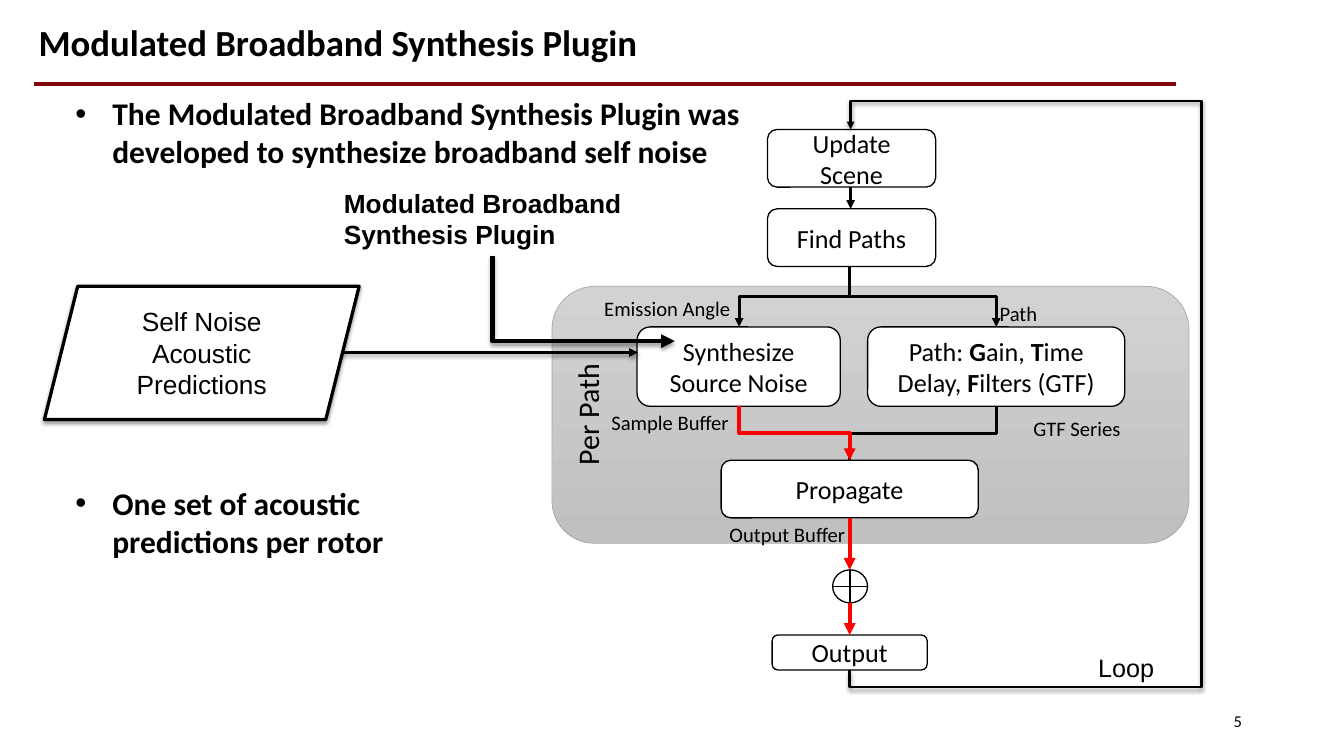
"""Build the slide on the broadband synthesis plugin and its processing loop."""
from lxml import etree
from pptx import Presentation
from pptx.dml.color import RGBColor
from pptx.enum import shapes, text
from pptx.oxml import ns
from pptx.util import Inches, Pt

BLACK = RGBColor(0, 0, 0)
WHITE = RGBColor(255, 255, 255)
RED = RGBColor(255, 0, 0)
MAROON = RGBColor(0x80, 0x08, 0x0C)
PANEL_TOP = RGBColor(0xD2, 0xD2, 0xD2)
PANEL_BOTTOM = RGBColor(0xC0, 0xC0, 0xC0)
PANEL_EDGE = RGBColor(0xA5, 0xA5, 0xA5)

KIND = shapes.MSO_SHAPE
CENTER, LEFT, RIGHT = text.PP_ALIGN.CENTER, text.PP_ALIGN.LEFT, text.PP_ALIGN.RIGHT
TOP, MIDDLE = text.MSO_ANCHOR.TOP, text.MSO_ANCHOR.MIDDLE

TITLE = "Modulated Broadband Synthesis Plugin"
AXIS = 8.99
GTF = [("Path: ", False), ("G", True), ("ain, ", False), ("T", True),
       ("ime Delay, ", False), ("F", True), ("ilters (GTF)", False)]
STEPS = [
    ((8.12, 1.37, 1.78, 0.61), "Update Scene"),
    ((8.12, 2.21, 1.78, 0.61), "Find Paths"),
    ((9.18, 3.46, 2.72, 0.84), GTF),
    ((6.74, 3.46, 2.15, 0.84), "Synthesize Source Noise"),
    ((7.63, 4.87, 2.72, 0.61), "Propagate"),
    ((8.17, 6.72, 1.64, 0.37), "Output"),
]
LABELS = [
    ((6.29, 3.08, 1.54, 0.36), "Emission Angle"),
    ((10.47, 3.14, 0.61, 0.36), "Path"),
    ((6.36, 4.29, 1.46, 0.36), "Sample Buffer"),
    ((10.83, 4.35, 1.13, 0.36), "GTF Series"),
    ((7.61, 5.47, 1.44, 0.36), "Output Buffer"),
]
BULLETS = [
    ((0.7, 0.95, 7.6, 1.04), "The Modulated Broadband Synthesis Plugin was "
                             "developed to synthesize broadband self noise"),
    ((0.7, 5.07, 4.01, 2.5), "One set of acoustic predictions per rotor"),
]
FORKS = [((AXIS, 2.82), (7.82, 3.46)), ((AXIS, 2.82), (10.54, 3.46))]
RED_DROPS = [((AXIS, 5.48), (AXIS, 6.03)), ((AXIS, 6.38), (AXIS, 6.72))]
LOOP = [(AXIS, 7.09), (AXIS, 7.27), (12.71, 7.27), (12.71, 1.07), (9, 1.07), (9, 1.37)]


def add_child(parent, tag, **attributes):
    return etree.SubElement(parent, ns.qn(tag), attributes)


def set_effect(shape, shadow=False):
    properties = shape._element.spPr
    for old in properties.findall(ns.qn("a:effectLst")):
        properties.remove(old)
    effects = add_child(properties, "a:effectLst")
    if shadow:
        outer = add_child(effects, "a:outerShdw", blurRad=str(Pt(3.1)), dist=str(Pt(1.6)),
                          dir="5400000", rotWithShape="0")
        color = add_child(outer, "a:srgbClr", val=str(BLACK))
        add_child(color, "a:alpha", val="38000")


def set_line(shape, color, width, arrow=False, shadow=False):
    shape.line.color.rgb = color
    shape.line.width = Pt(width)
    if arrow:
        add_child(shape.line._get_or_add_ln(), "a:tailEnd", type="triangle")
    set_effect(shape, shadow)


def write(shape, content, size, font="Calibri", bold=False, align=LEFT,
          anchor=TOP, wrap=True, bullet=False):
    frame = shape.text_frame
    frame.word_wrap = wrap
    frame.vertical_anchor = anchor
    para = frame.paragraphs[0]
    para.alignment = align
    if bullet:
        settings = para._p.get_or_add_pPr()
        settings.set("marL", str(Inches(0.39)))
        settings.set("indent", str(Inches(-0.39)))
        add_child(settings, "a:buFont", typeface="Arial")
        add_child(settings, "a:buChar", char="•")
    spans = [(content, bold)] if isinstance(content, str) else content
    for words, strong in spans:
        span = para.add_run()
        span.text = words
        span.font.name = font
        span.font.size = Pt(size)
        span.font.bold = strong
        span.font.color.rgb = BLACK


def add_text(page, place, content, size, **style):
    box = page.shapes.add_textbox(*map(Inches, place))
    write(box, content, size, **style)


def add_outline(page, kind, place, width, color=BLACK, shadow=False):
    shape = page.shapes.add_shape(kind, *map(Inches, place))
    shape.fill.solid()
    shape.fill.fore_color.rgb = WHITE
    set_line(shape, color, width, shadow=shadow)
    return shape


def add_straight(page, start, end, color, width, arrow=True, shadow=False):
    line = page.shapes.add_connector(shapes.MSO_CONNECTOR.STRAIGHT,
                                     *map(Inches, start + end))
    set_line(line, color, width, arrow, shadow)


def add_elbow(page, start, end, color, width, arrow=True, shadow=False, single=False):
    """Add an elbow that leaves its start going down."""
    (x1, y1), (x2, y2) = start, end
    mid_x, mid_y = (x1 + x2) / 2, (y1 + y2) / 2
    half_w, half_h = (y2 - y1) / 2, abs(x2 - x1) / 2
    corners = (mid_x - half_w, mid_y - half_h, mid_x + half_w, mid_y + half_h)
    line = page.shapes.add_connector(shapes.MSO_CONNECTOR.ELBOW, *map(Inches, corners))
    frame = line._element.spPr.find(ns.qn("a:xfrm"))
    frame.set("rot", str((270 if x2 > x1 else 90) * 60000))
    if x2 > x1:
        frame.set("flipH", "1")
    if single:
        line._element.spPr.find(ns.qn("a:prstGeom")).set("prst", "bentConnector2")
    set_line(line, color, width, arrow, shadow)


def add_panel(page):
    panel = add_outline(page, KIND.ROUNDED_RECTANGLE, (5.84, 3.03, 6.74, 2.72), 0.5, PANEL_EDGE)
    panel.fill.gradient()
    panel.fill.gradient_angle = 270
    for stop, color in zip(panel.fill.gradient_stops, (PANEL_TOP, PANEL_BOTTOM)):
        stop.color.rgb = color
    write(panel, "Per Path", 22.8, align=CENTER)
    panel.text_frame._txBody.bodyPr.set("vert", "vert270")


def add_loop(page):
    points = [(Inches(x), Inches(y)) for x, y in LOOP]
    builder = page.shapes.build_freeform(*points[0])
    builder.add_line_segments(points[1:], close=False)
    loop = builder.convert_to_shape()
    loop.fill.background()
    set_line(loop, BLACK, 2, arrow=True, shadow=True)


def main():
    deck = Presentation()
    deck.slide_width, deck.slide_height = Inches(14.22), Inches(8)
    page = deck.slides.add_slide(deck.slide_layouts[6])

    add_straight(page, (0.36, 0.89), (12.44, 0.89), MAROON, 3, arrow=False)
    add_text(page, (0.31, 0, 12.27, 0.88), TITLE, 28, bold=True, anchor=MIDDLE)
    add_text(page, (10.04, 7.41, 3.2, 0.43), "5", 12.6, align=RIGHT, anchor=MIDDLE)

    add_panel(page)
    add_elbow(page, (10.54, 4.3), (AXIS, 4.87), BLACK, 2.25, arrow=False)
    for place, content in STEPS:
        step = add_outline(page, KIND.ROUNDED_RECTANGLE, place, 1)
        write(step, content, 19.9, align=CENTER, anchor=MIDDLE)
    add_straight(page, (9, 1.98), (9, 2.21), BLACK, 2.25)
    mixer = add_outline(page, KIND.FLOWCHART_OR, (8.81, 6.03, 0.37, 0.35), 1)
    mixer.fill.background()
    add_elbow(page, (7.82, 4.3), (AXIS, 4.87), RED, 3)
    for start, end in FORKS:
        add_elbow(page, start, end, BLACK, 2.25)
    for start, end in RED_DROPS:
        add_straight(page, start, end, RED, 3)
    for place, content in LABELS:
        add_text(page, place, content, 15.7, align=CENTER, wrap=False)

    add_loop(page)
    add_text(page, (11.52, 6.85, 0.8, 0.42), "Loop", 19.2, font="Arial", wrap=False)
    add_text(page, (3.54, 1.93, 3.33, 0.77), TITLE, 20, font="Arial", bold=True)
    add_elbow(page, (5.21, 2.71), (7.14, 3.61), BLACK, 3.5, shadow=True, single=True)
    source = add_outline(page, KIND.PARALLELOGRAM, (0.47, 3.03, 3.33, 1.41), 2.5, shadow=True)
    write(source, "Self Noise Acoustic Predictions", 20, font="Arial",
          align=CENTER, anchor=MIDDLE)
    add_straight(page, (3.62, 3.73), (6.75, 3.73), BLACK, 2.25, shadow=True)
    for place, content in BULLETS:
        add_text(page, place, content, 24, bold=True, bullet=True)

    deck.save("out.pptx")


if __name__ == "__main__":
    main()
